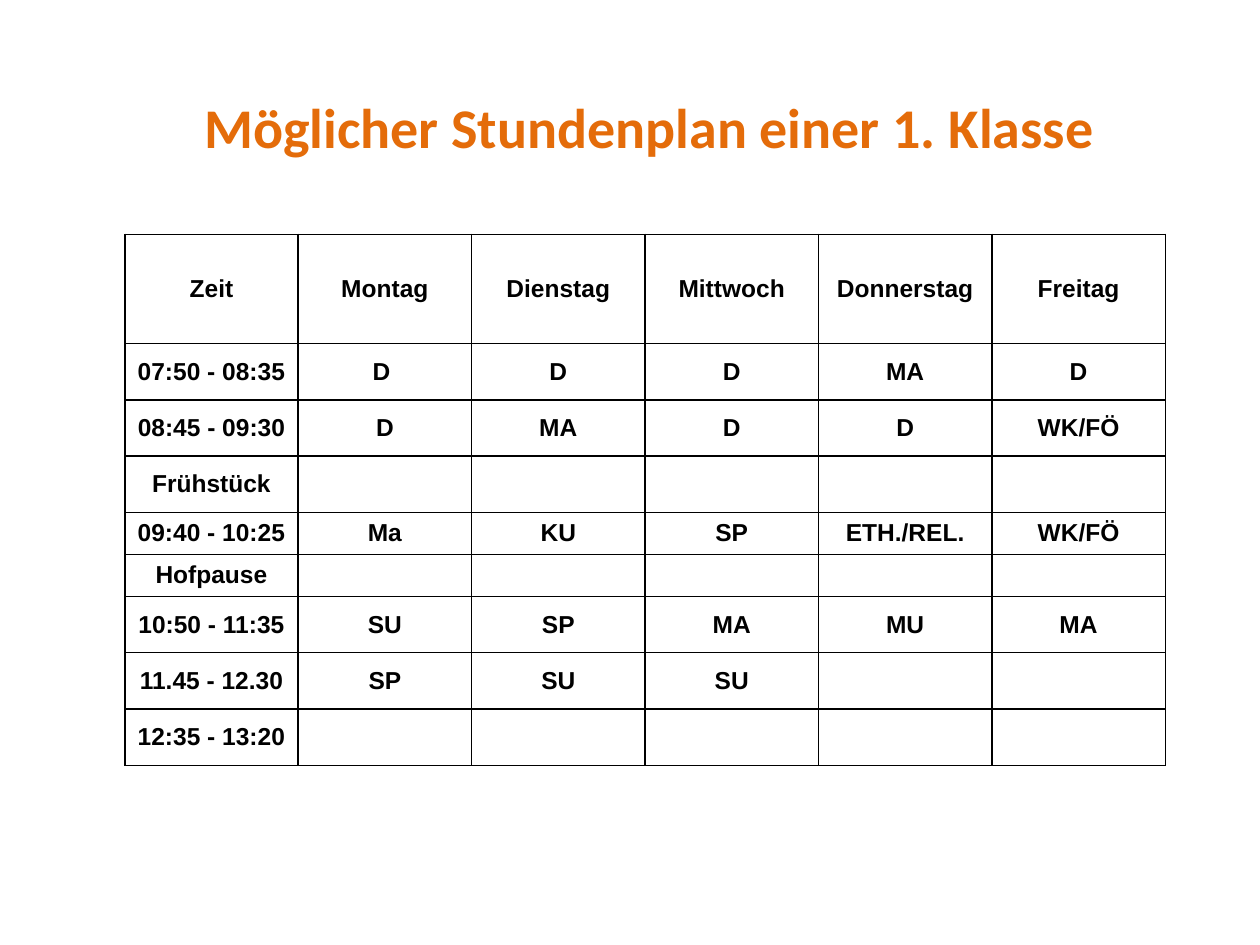
from dataclasses import dataclass

from lxml.etree import SubElement
from pptx import Presentation
from pptx.dml.color import RGBColor
from pptx.enum.text import MSO_ANCHOR, MSO_AUTO_SIZE, PP_ALIGN
from pptx.oxml.ns import qn
from pptx.util import Pt


@dataclass(frozen=True)
class Theme:
    title_font: str = "Calibri"
    body_font: str = "Arial"
    title_size: float = 32
    body_size: float = 14
    accent: str = "E46C0A"
    ink: str = "000000"
    border_width: float = 1


class Deck:
    def __init__(self, prs, theme):
        self.prs, self.theme = prs, theme
        self.s = None

    def add_slide(self):
        self.s = self.prs.slides.add_slide(self.prs.slide_layouts[5])

    def add_text(self, p, text, font, size, color):
        p.alignment = PP_ALIGN.CENTER
        r = p.add_run()
        r.text = text
        r.font.name, r.font.size, r.font.bold = font, Pt(size), True
        r.font.color.rgb = RGBColor.from_string(color)

    def title(self, text, left, top, width, height):
        sp = self.s.shapes.title
        sp.left, sp.top, sp.width, sp.height = map(Pt, (left, top, width, height))
        tf = sp.text_frame
        tf.word_wrap = True
        tf.auto_size = MSO_AUTO_SIZE.NONE
        tf.vertical_anchor = MSO_ANCHOR.TOP
        t = self.theme
        self.add_text(tf.paragraphs[0], text, t.title_font, t.title_size, t.accent)

    def border(self, cell):
        tc_pr = cell._tc.get_or_add_tcPr()
        # Border lines must come before the fill
        for i, side in enumerate(("a:lnL", "a:lnR", "a:lnT", "a:lnB")):
            ln = SubElement(tc_pr, qn(side), w=str(Pt(self.theme.border_width)))
            fill = SubElement(ln, qn("a:solidFill"))
            SubElement(fill, qn("a:srgbClr"), val=self.theme.ink)
            tc_pr.insert(i, ln)

    def table(self, rows, left, top, col_width, row_heights):
        t = self.theme
        n_cols = len(rows[0])
        frame = self.s.shapes.add_table(
            len(rows), n_cols, Pt(left), Pt(top),
            Pt(col_width * n_cols), Pt(sum(row_heights)))
        table = frame.table
        table.first_row = table.horz_banding = False
        for col in table.columns:
            col.width = Pt(col_width)
        for row, height, texts in zip(table.rows, row_heights, rows):
            row.height = Pt(height)
            for cell, text in zip(row.cells, texts):
                cell.fill.background()
                self.border(cell)
                cell.vertical_anchor = MSO_ANCHOR.MIDDLE
                cell.margin_top = cell.margin_bottom = 0
                if text:
                    self.add_text(cell.text_frame.paragraphs[0], text,
                                  t.body_font, t.body_size, t.ink)


TIMETABLE = [
    ["Zeit", "Montag", "Dienstag", "Mittwoch", "Donnerstag", "Freitag"],
    ["07:50 - 08:35", "D ", "D", "D", "MA", "D"],
    ["08:45 - 09:30 ", "D", "MA", "D", "D", "WK/FÖ"],
    ["Frühstück", "", "", "", "", ""],
    ["09:40 - 10:25", "Ma", "KU", "SP", "ETH./REL.", "WK/FÖ"],
    ["Hofpause", "", "", "", "", ""],
    ["10:50 - 11:35", "SU", "SP", "MA", "MU", "MA"],
    ["11.45 - 12.30 ", "SP", "SU", "SU", "", ""],
    ["12:35 - 13:20", "", "", "", "", ""],
]
HEADER, LESSON, COMPACT = 62.4, 32.2, 24


def main():
    prs = Presentation()
    prs.slide_width, prs.slide_height = Pt(720), Pt(540)
    deck = Deck(prs, Theme())
    deck.add_slide()

    # Heading
    deck.title("Möglicher Stundenplan einer 1. Klasse", 76.3, 49, 589.7, 67.7)

    # Timetable: tall header, lessons, two compact rows around the break
    heights = [HEADER] + [LESSON] * 3 + [COMPACT] * 2 + [LESSON] * 3
    deck.table(TIMETABLE, 71.3, 133.9, 99.12, heights)

    prs.save("out.pptx")


if __name__ == "__main__":
    main()
